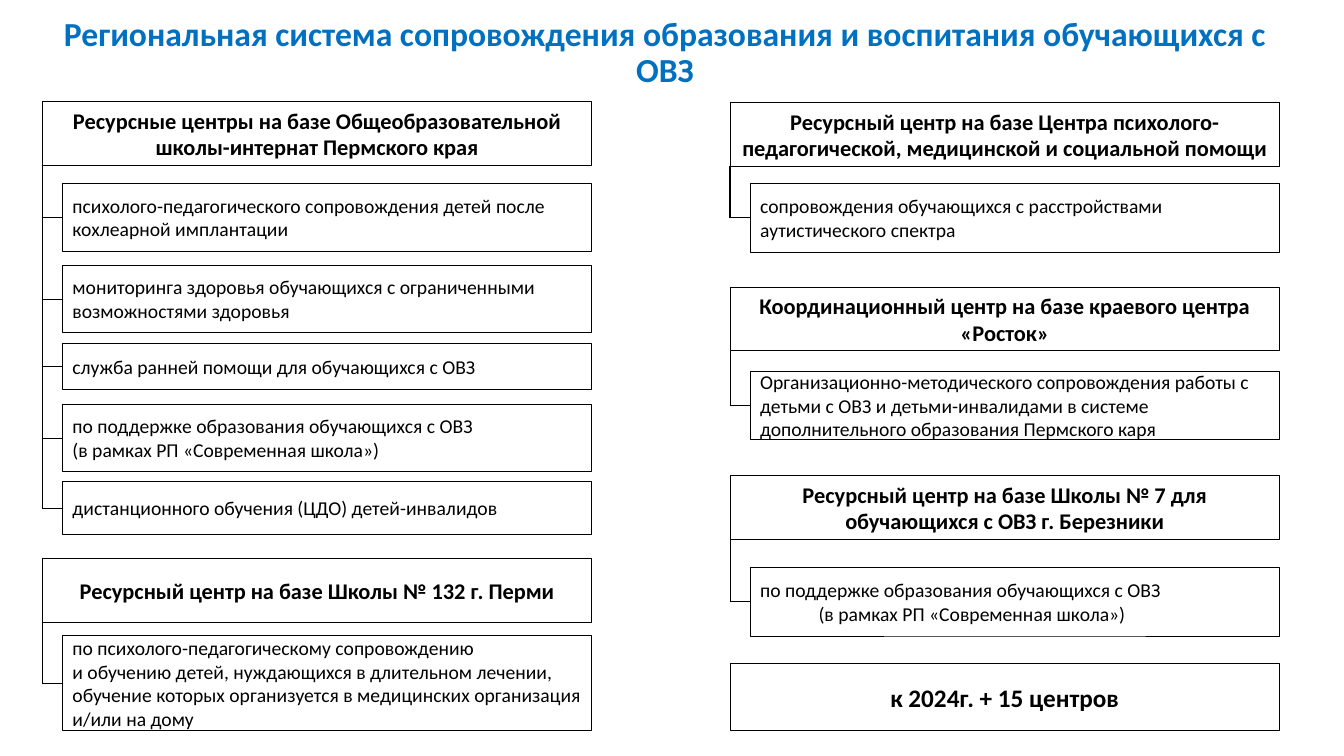
import pptx
import pptx.util
import pptx.dml.color
import pptx.enum.shapes
import pptx.enum.text
import pptx.oxml.ns
from lxml import etree

Inches = pptx.util.Inches
Align = pptx.enum.text.PP_ALIGN
Shape = pptx.enum.shapes


def paint(part, tone):
    part.rgb = pptx.dml.color.RGBColor.from_string(tone)


def box(left, top, width, height, text, size, bold, align, dent=0):
    rect = slide.shapes.add_shape(
        Shape.MSO_SHAPE.RECTANGLE, Inches(left), Inches(top), Inches(width), Inches(height))
    rect.shadow.inherit = False
    rect.fill.solid()
    paint(rect.fill.fore_color, "FFFFFF")
    paint(rect.line.color, "000000")
    rect.line.width = pptx.util.Pt(0.5)
    frame = rect.text_frame
    frame.word_wrap = True
    frame.vertical_anchor = pptx.enum.text.MSO_ANCHOR.MIDDLE
    frame.text = text
    for para in frame.paragraphs:
        para.alignment = align
        form = {"name": "Calibri", "size": pptx.util.Pt(size), "bold": bold}
        for key, value in form.items():
            setattr(para.font, key, value)
        paint(para.font.color, "000000")
    if dent:
        frame.paragraphs[-1]._p.get_or_add_pPr().set("marL", str(Inches(dent)))


deck = pptx.Presentation()
deck.slide_width = Inches(13.33)
deck.slide_height = Inches(7.5)
slide = deck.slides.add_slide(deck.slide_layouts[5])

title = slide.shapes.title
place = {"left": 0.5, "top": 0.3, "width": 12.19, "height": 0.47}
for key, value in place.items():
    setattr(title, key, Inches(value))
frame = title.text_frame
frame.text = "Региональная система сопровождения образования и воспитания обучающихся с ОВЗ"
look = {"word_wrap": True, "auto_size": pptx.enum.text.MSO_AUTO_SIZE.NONE,
        "vertical_anchor": pptx.enum.text.MSO_ANCHOR.MIDDLE}
for key, value in look.items():
    setattr(frame, key, value)
para = frame.paragraphs[0]
para.alignment = Align.CENTER
para.line_spacing = 0.9
form = {"name": "Calibri", "size": pptx.util.Pt(24), "bold": True}
for key, value in form.items():
    setattr(para.font, key, value)
paint(para.font.color, "0070C0")

support = "по поддержке образования обучающихся с ОВЗ\n(в рамках РП «Современная школа»)"
groups = [
    (0.42, 1.01, 0.5, "Ресурсные центры на базе Общеобразовательной школы-интернат Пермского края", [
        (1.82, 0.67, "психолого-педагогического сопровождения детей после кохлеарной имплантации"),
        (2.63, 0.67, "мониторинга здоровья обучающихся с ограниченными возможностями здоровья"),
        (3.41, 0.45, "служба ранней помощи для обучающихся с ОВЗ"),
        (4.01, 0.67, support),
        (4.78, 0.52, "дистанционного обучения (ЦДО) детей-инвалидов")]),
    (0.42, 5.54, 0.5, "Ресурсный центр на базе Школы № 132 г. Перми", [
        (6.3, 0.95, "по психолого-педагогическому сопровождению\n"
         "и обучению детей, нуждающихся в длительном лечении, "
         "обучение которых организуется в медицинских организация и/или на дому")]),
    (7.24, 1.02, 1, "Ресурсный центр на базе Центра психолого-педагогической, "
     "медицинской и социальной помощи", [
         (1.82, 0.68, "сопровождения обучающихся с расстройствами аутистического спектра")]),
    (7.24, 2.85, 0.5, "Координационный центр на базе краевого центра «Росток»", [
        (3.68, 0.68, "Организационно-методического сопровождения работы с детьми с ОВЗ "
         "и детьми-инвалидами в системе дополнительного образования Пермского каря")]),
    (7.24, 4.72, 0.5, "Ресурсный центр на базе Школы № 7 для обучающихся с ОВЗ г. Березники", [
        (5.63, 0.68, support, 0.58)]),
]
step = 0.2
wide = 5.45
tall = 0.63

for left, top, weight, head, items in groups:
    box(left, top, wide, tall, head, 16, True, Align.CENTER)
    lines = []
    for y, high, text, *dent in items:
        box(left + step, y, wide - step, high, text, 14, False, Align.LEFT, *dent)
        mid = y + high / 2
        lines.append((left, mid, left + step, mid))
    lines.append((left, top + tall, left, mid))
    for ends in lines:
        line = slide.shapes.add_connector(
            Shape.MSO_CONNECTOR.STRAIGHT, *[Inches(end) for end in ends])
        paint(line.line.color, "000000")
        line.line.width = pptx.util.Pt(weight)
        etree.SubElement(line._element.spPr, pptx.oxml.ns.qn("a:effectLst"))

box(7.24, 6.58, wide, 0.67, "к 2024г. + 15 центров", 18, True, Align.CENTER)

deck.save("out.pptx")
